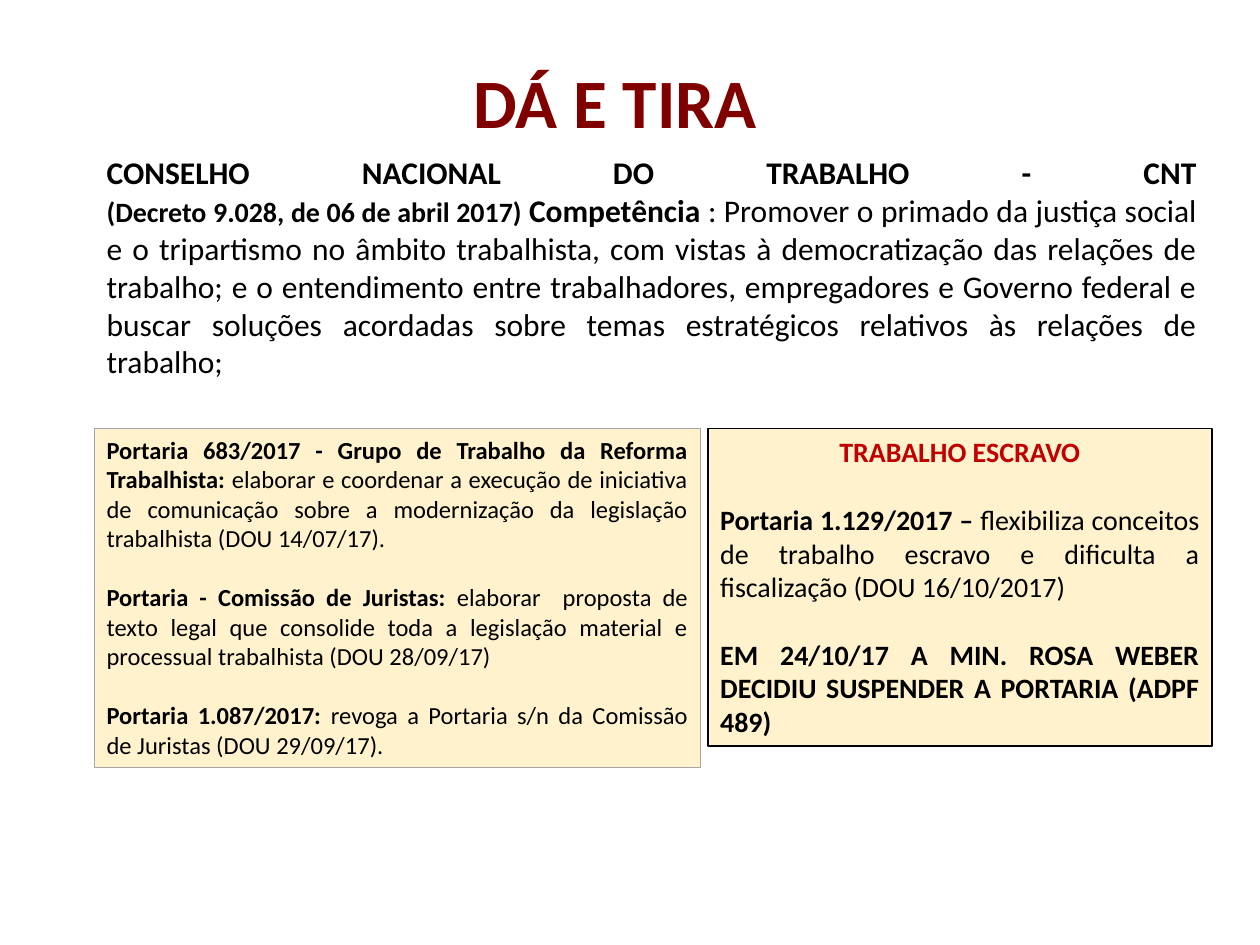
from pptx import Presentation
from pptx.dml.color import RGBColor
from pptx.enum.shapes import MSO_SHAPE
from pptx.enum.text import MSO_ANCHOR, PP_ALIGN
from pptx.util import Cm, Pt

FONT = "Calibri"
BLACK, MAROON, RED = "000000", "800000", "C00000"
CREAM, GREY = "FFF2CC", "A5A5A5"
LINE_HEIGHT = 1.22  # natural line height of the font, in ems

LEFT = 1.9
PANEL_TOP = 8.64


def color(hex_code):
    return RGBColor.from_string(hex_code)


def write_paragraph(paragraph, runs, align=PP_ALIGN.JUSTIFY):
    """Each run is (text, size, bold, hex colour); a final newline breaks the line."""
    paragraph.alignment = align
    for text, size, bold, hex_code in runs:
        run = paragraph.add_run()
        run.text = text.rstrip("\n")
        run.font.name = FONT
        run.font.size = Pt(size)
        run.font.bold = bold
        run.font.color.rgb = color(hex_code)
        if text.endswith("\n"):
            paragraph.add_line_break()


def add_text(slide, left, top, width, height, runs,
             align=PP_ALIGN.JUSTIFY, anchor=MSO_ANCHOR.TOP):
    box = slide.shapes.add_textbox(Cm(left), Cm(top), Cm(width), Cm(height))
    frame = box.text_frame
    frame.word_wrap = True
    frame.vertical_anchor = anchor
    write_paragraph(frame.paragraphs[0], runs, align)


def add_panel(slide, left, width, height, border, border_width, size, entries):
    """Cream panel; entries are (align, [(text, bold, hex colour), ...])."""
    panel = slide.shapes.add_shape(
        MSO_SHAPE.RECTANGLE, Cm(left), Cm(PANEL_TOP), Cm(width), Cm(height))
    panel.shadow.inherit = False
    panel.fill.solid()
    panel.fill.fore_color.rgb = color(CREAM)
    panel.line.color.rgb = color(border)
    panel.line.width = Pt(border_width)
    frame = panel.text_frame
    frame.word_wrap = True
    frame.vertical_anchor = MSO_ANCHOR.TOP
    for index, (align, parts) in enumerate(entries):
        paragraph = frame.add_paragraph() if index else frame.paragraphs[0]
        if index:
            paragraph.space_before = Pt(round(size * LINE_HEIGHT, 1))
        runs = [(text, size, bold, hex_code) for text, bold, hex_code in parts]
        write_paragraph(paragraph, runs, align)


def ruling(heading, summary):
    """Justified entry with a bold heading and a plain summary."""
    return PP_ALIGN.JUSTIFY, [(heading, True, BLACK), (summary, False, BLACK)]


def main():
    prs = Presentation()
    prs.slide_width, prs.slide_height = Cm(25.4), Cm(19.05)
    slide = prs.slides.add_slide(prs.slide_layouts[6])

    # Title
    add_text(slide, 7.11, 0.38, 10.59, 2.62, [("DÁ E TIRA", 39.6, True, MAROON)],
             PP_ALIGN.CENTER, MSO_ANCHOR.BOTTOM)

    # National labour council
    add_text(slide, LEFT, 2.97, 22.48, 5.64, [
        ("CONSELHO NACIONAL DO TRABALHO - CNT\n", 18, True, BLACK),
        ("(Decreto 9.028, de 06 de abril 2017) ", 16, True, BLACK),
        ("Competência ", 18, True, BLACK),
        (": Promover o primado da justiça social e o tripartismo no âmbito "
         "trabalhista, com vistas à democratização das relações de trabalho; e o "
         "entendimento entre trabalhadores, empregadores e Governo federal e buscar "
         "soluções acordadas sobre temas estratégicos relativos às relações de "
         "trabalho;", 18, False, BLACK),
    ])

    # Labour reform ordinances
    add_panel(slide, LEFT, 12.22, 6.83, GREY, 0.5, 14, [
        ruling("Portaria 683/2017 - Grupo de Trabalho da Reforma Trabalhista: ",
               "elaborar e coordenar a execução de iniciativa de comunicação sobre "
               "a modernização da legislação trabalhista (DOU 14/07/17)."),
        ruling("Portaria - Comissão de Juristas: ",
               "elaborar  proposta de texto legal que consolide toda a legislação "
               "material e processual trabalhista (DOU 28/09/17)"),
        ruling("Portaria 1.087/2017: ",
               "revoga a Portaria s/n da Comissão de Juristas (DOU 29/09/17)."),
    ])

    # Slave labour ordinance
    add_panel(slide, 14.27, 10.16, 6.4, BLACK, 1, 16, [
        (PP_ALIGN.CENTER, [("TRABALHO ESCRAVO", True, RED)]),
        ruling("Portaria 1.129/2017 – ",
               "flexibiliza conceitos de trabalho escravo e dificulta a "
               "fiscalização (DOU 16/10/2017)"),
        (PP_ALIGN.JUSTIFY, [("EM 24/10/17 A MIN. ROSA WEBER DECIDIU SUSPENDER A "
                             "PORTARIA (ADPF 489)", True, BLACK)]),
    ])

    prs.save("out.pptx")


if __name__ == "__main__":
    main()
